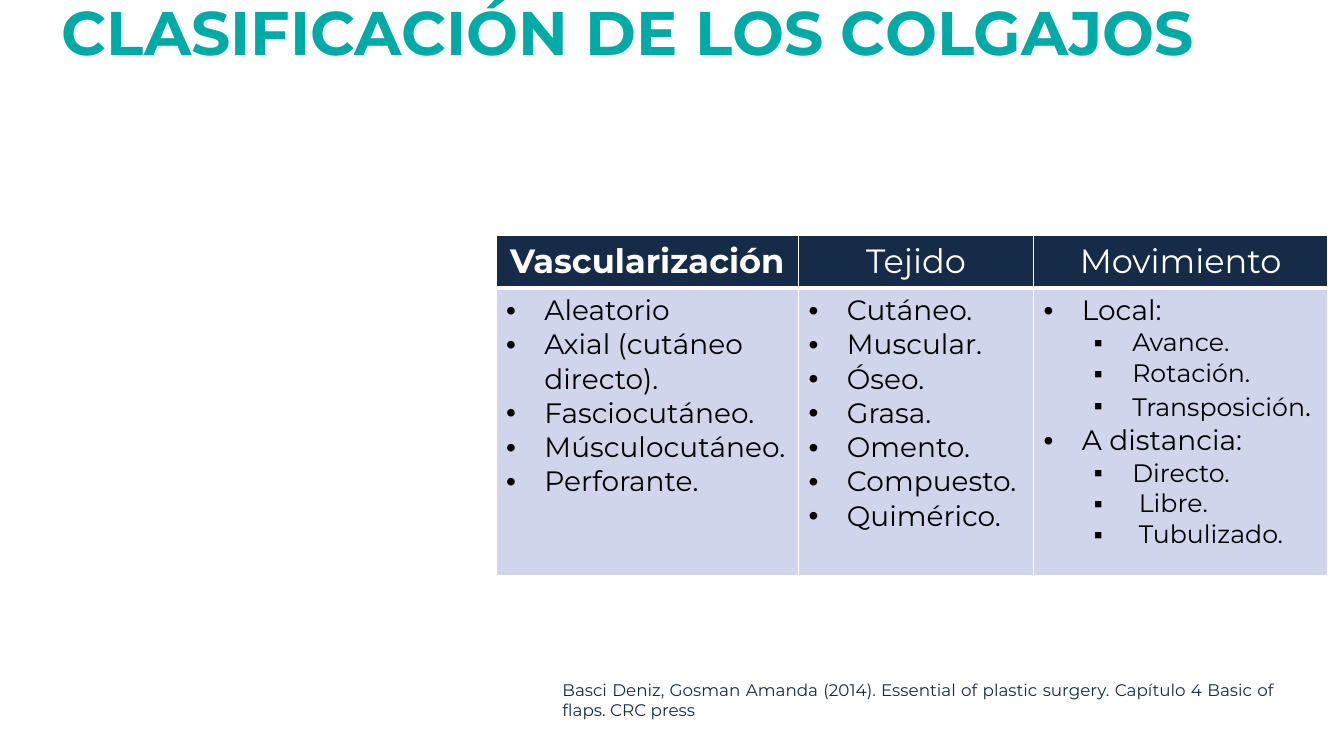
from lxml import etree
from pptx import Presentation
from pptx.dml.color import RGBColor
from pptx.enum import text
from pptx.oxml import ns
from pptx.util import Inches, Pt

FONT = "Montserrat"
NAVY, TEAL, PALE = "152B48", "00AAA7", "CFD5EA"
WHITE, BLACK = "FFFFFF", "000000"

HEADERS = ["Vascularización", "Tejido", "Movimiento"]
# Each item is (level, text)
COLUMNS = [
    [(0, "Aleatorio"), (0, "Axial (cutáneo directo)."), (0, "Fasciocutáneo."),
     (0, "Músculocutáneo."), (0, "Perforante.")],
    [(0, "Cutáneo."), (0, "Muscular."), (0, "Óseo."), (0, "Grasa."),
     (0, "Omento."), (0, "Compuesto."), (0, "Quimérico.")],
    [(0, "Local:"), (1, "Avance."), (1, "Rotación."), (1, "Transposición."),
     (0, "A distancia:"), (1, "Directo."), (1, " Libre."), (1, " Tubulizado.")],
]
BULLETS = ["•", "▪"]
ITEM_SIZES = [20, 18]
INDENTS = [0.38, 0.88]


def rgb(color):
    return RGBColor.from_string(color)


def format_runs(p, size, color, bold=False):
    for r in p.runs:
        r.font.name = FONT
        r.font.size = Pt(size)
        r.font.bold = bold
        r.font.color.rgb = rgb(color)


def add_bullet(p, level):
    pPr = p._p.get_or_add_pPr()
    pPr.set("marL", str(Inches(INDENTS[level])))
    pPr.set("indent", str(-Inches(0.38)))
    etree.SubElement(pPr, ns.qn("a:buFont")).set("typeface", "Arial")
    etree.SubElement(pPr, ns.qn("a:buChar")).set("char", BULLETS[level])


def style_cell(cell, fill, bottom=1):
    tcPr = cell._tc.get_or_add_tcPr()
    for side, width in (("L", 1), ("R", 1), ("T", 1), ("B", bottom)):
        ln = etree.SubElement(tcPr, ns.qn("a:ln" + side), w=str(Pt(width)))
        line_fill = etree.SubElement(ln, ns.qn("a:solidFill"))
        etree.SubElement(line_fill, ns.qn("a:srgbClr"), val=WHITE)
    cell.fill.solid()
    cell.fill.fore_color.rgb = rgb(fill)


def set_title(slide, title):
    sp = slide.shapes.title
    sp.left, sp.top = Inches(0.51), Inches(0.3)
    sp.width, sp.height = Inches(11.5), Inches(1.45)
    tf = sp.text_frame
    tf.text = title
    tf.word_wrap = True
    tf.auto_size = text.MSO_AUTO_SIZE.NONE
    tf.vertical_anchor = text.MSO_ANCHOR.MIDDLE
    # The deep bottom margin lifts the line to the slide's top edge
    tf.margin_top, tf.margin_bottom = 0, Inches(1.34)
    p = tf.paragraphs[0]
    p.alignment = text.PP_ALIGN.LEFT
    p.line_spacing = 0.9
    format_runs(p, 44, TEAL, bold=True)


def fill_header(cell, label, bold):
    style_cell(cell, NAVY, bottom=3)
    p = cell.text_frame.paragraphs[0]
    p.text = label
    p.alignment = text.PP_ALIGN.CENTER
    format_runs(p, 24, WHITE, bold)


def fill_list(cell, items):
    style_cell(cell, PALE)
    tf = cell.text_frame
    for i, (level, item) in enumerate(items):
        p = tf.add_paragraph() if i else tf.paragraphs[0]
        p.text = item
        p.level = level
        add_bullet(p, level)
        format_runs(p, ITEM_SIZES[level], BLACK)
        # The full stop of this item is set at the larger size
        if item == "Transposición.":
            p.runs[0].text = item[:-1]
            p.add_run().text = "."
            format_runs(p, ITEM_SIZES[1], BLACK)
            p.runs[1].font.size = Pt(ITEM_SIZES[0])


def add_flap_table(slide):
    table = slide.shapes.add_table(2, 3, Inches(4.92), Inches(2.34),
                                   Inches(8.25), Inches(3.37)).table
    for column, width in zip(table.columns, (3, 2.33, 2.92)):
        column.width = Inches(width)
    for row, height in zip(table.rows, (0.52, 2.85)):
        row.height = Inches(height)
    for i, (label, items) in enumerate(zip(HEADERS, COLUMNS)):
        fill_header(table.cell(0, i), label, bold=i == 0)
        fill_list(table.cell(1, i), items)


def add_citation(slide, citation):
    sp = slide.shapes.add_textbox(Inches(5.48), Inches(6.69),
                                  Inches(7.26), Inches(0.5))
    tf = sp.text_frame
    tf.word_wrap = True
    tf.auto_size = text.MSO_AUTO_SIZE.SHAPE_TO_FIT_TEXT
    p = tf.paragraphs[0]
    p.text = citation
    p.alignment = text.PP_ALIGN.JUSTIFY
    format_runs(p, 12, NAVY)


def main():
    prs = Presentation()
    prs.slide_width, prs.slide_height = Inches(13.33), Inches(7.5)
    slide = prs.slides.add_slide(prs.slide_layouts[5])

    # Title
    set_title(slide, "CLASIFICACIÓN DE LOS COLGAJOS")
    # Classification table
    add_flap_table(slide)
    # Source
    add_citation(slide, "Basci Deniz, Gosman Amanda (2014). Essential of plastic "
                        "surgery. Capítulo 4 Basic of flaps. CRC press")

    prs.save("out.pptx")


if __name__ == "__main__":
    main()
